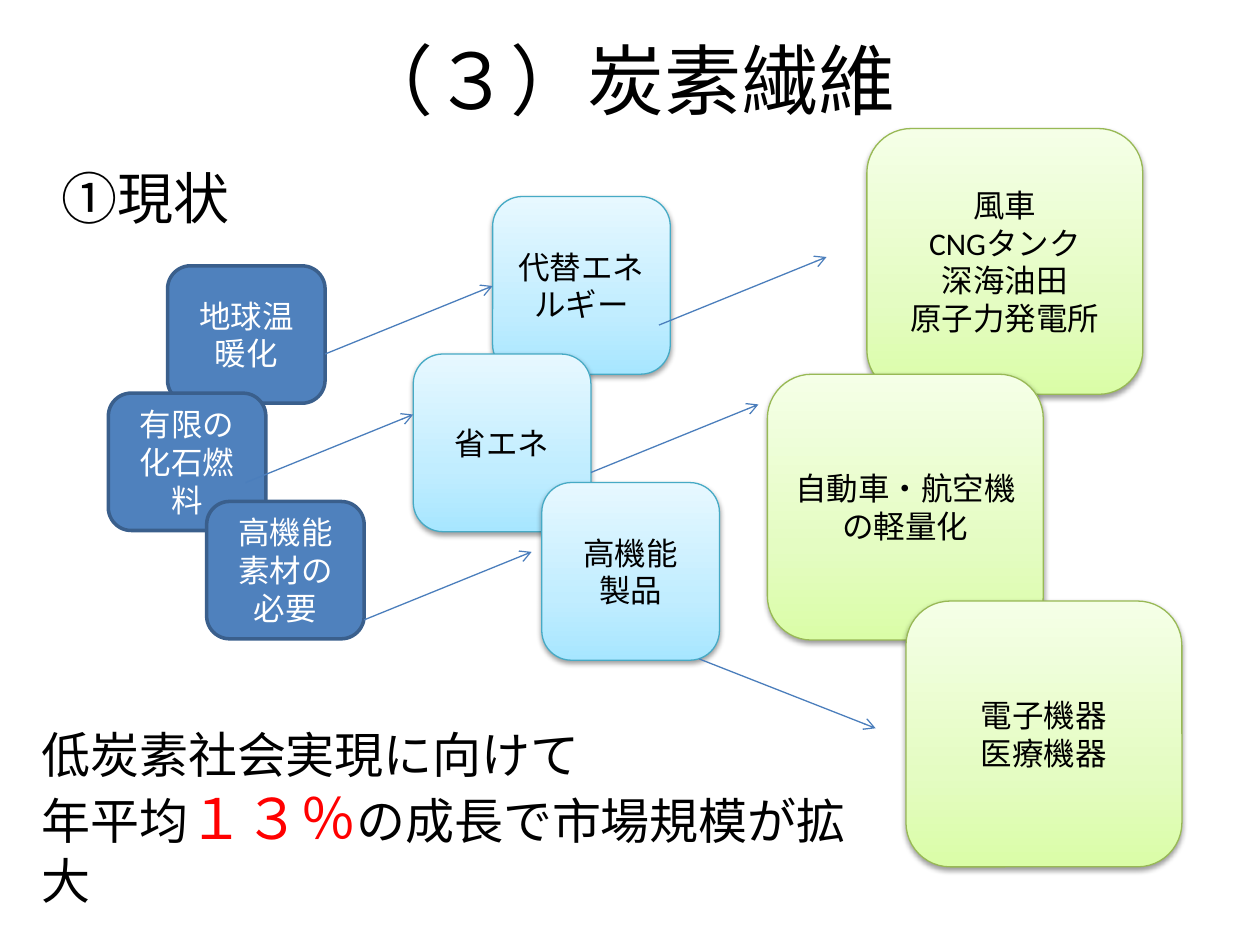
from lxml.etree import SubElement
from pptx import Presentation
from pptx.dml.color import RGBColor
from pptx.enum.shapes import MSO_CONNECTOR as Connector, MSO_SHAPE as Shape
from pptx.enum.text import MSO_ANCHOR as Anchor, PP_ALIGN as Align
from pptx.oxml.ns import qn
from pptx.util import Inches, Pt

FONT = "Calibri"
BLACK = RGBColor(0x00, 0x00, 0x00)
WHITE = RGBColor(0xFF, 0xFF, 0xFF)
RED = RGBColor(0xFF, 0x00, 0x00)
BLUE = RGBColor(0x4F, 0x81, 0xBD)
BLUE_EDGE = RGBColor(0x3A, 0x5F, 0x8C)
AQUA_EDGE = RGBColor(0x46, 0xAA, 0xC5)
GREEN_EDGE = RGBColor(0x98, 0xB9, 0x55)
ARROW = RGBColor(0x4B, 0x7E, 0xBC)
AQUA_STOPS = [(0, "A7E6FF"), (35, "C1EDFF"), (100, "E7F8FF")]
GREEN_STOPS = [(0, "DAFDA7"), (35, "E4FCC2"), (100, "F5FFE7")]

# Content: each group holds its look, its card size and (left, top, text)
TITLE = "（３）炭素繊維"
HEADING = "①現状"
GROUPS = [
    dict(size=(1.25, 1.09), fill=BLUE, edge=BLUE_EDGE, weight=2, ink=WHITE, cards=[
        (1.33, 2.11, "地球温暖化"),
        (0.86, 3.12, "有限の化石燃料"),
        (1.64, 3.98, "高機能素材の\n必要")]),
    dict(size=(1.41, 1.41), fill=AQUA_STOPS, edge=AQUA_EDGE, weight=0.75, ink=BLACK, cards=[
        (3.91, 1.56, "代替エネルギー"),
        (3.28, 2.81, "省エネ"),
        (4.30, 3.83, "高機能\n製品")]),
    dict(size=(2.19, 2.11), fill=GREEN_STOPS, edge=GREEN_EDGE, weight=0.75, ink=BLACK, cards=[
        (6.88, 1.02, "風車\nCNGタンク\n深海油田\n原子力発電所"),
        (6.09, 2.97, "自動車・航空機の軽量化"),
        (7.19, 4.77, "電子機器\n医療機器")]),
]
RISE = (1.33, -0.54)
ARROWS = [  # start, run and rise
    ((2.58, 2.81), RISE), ((1.95, 3.83), RISE), ((2.89, 4.92), RISE),
    ((5.23, 2.58), RISE), ((4.69, 3.75), RISE), ((5.55, 5.23), (1.40, 0.55)),
]
SUMMARY = [
    [("低炭素社会実現に向けて", 28, BLACK)],
    [("年平均", 28, BLACK), ("１３％", 32, RED), ("の成長で市場規模が拡大", 28, BLACK)],
]


def style(span, size, color):
    span.font.name = FONT
    span.font.size = Pt(size)
    span.font.color.rgb = color


def write(frame, text, size, color, align):
    frame.word_wrap = True
    frame.text = text
    for para in frame.paragraphs:
        para.alignment = align
        for span in para.runs:
            style(span, size, color)


def add_color(parent, value):
    return SubElement(parent, qn("a:srgbClr"), val=value)


def paint_gradient(box, stops):
    box.fill.gradient()
    box.fill.gradient_angle = 90
    stop_list = box._element.spPr.find(".//" + qn("a:gsLst"))
    for old in list(stop_list):
        stop_list.remove(old)
    for position, value in stops:
        add_color(SubElement(stop_list, qn("a:gs"), pos=str(position * 1000)), value)


def add_shadow(box):
    effects = box._element.spPr.find(qn("a:effectLst"))
    shadow = SubElement(effects, qn("a:outerShdw"), blurRad=str(Pt(3.1)), dist=str(Pt(1.6)),
                        dir=str(90 * 60000), rotWithShape="0")
    SubElement(add_color(shadow, "000000"), qn("a:alpha"), val="38000")


def add_card(page, group, left, top, text):
    box = page.shapes.add_shape(Shape.ROUNDED_RECTANGLE, Inches(left), Inches(top),
                                *map(Inches, group["size"]))
    box.shadow.inherit = False
    box.line.color.rgb = group["edge"]
    box.line.width = Pt(group["weight"])
    if isinstance(group["fill"], RGBColor):
        box.fill.solid()
        box.fill.fore_color.rgb = group["fill"]
    else:
        paint_gradient(box, group["fill"])
        add_shadow(box)
    box.text_frame.vertical_anchor = Anchor.MIDDLE
    write(box.text_frame, text, 18, group["ink"], Align.CENTER)


def add_arrow(page, start, step):
    (x, y), (run, rise) = start, step
    line = page.shapes.add_connector(Connector.STRAIGHT, Inches(x), Inches(y),
                                     Inches(x + run), Inches(y + rise))
    line.line.color.rgb = ARROW
    line.line.width = Pt(0.75)
    SubElement(line.line._get_or_add_ln(), qn("a:tailEnd"), type="arrow")
    SubElement(line._element.spPr, qn("a:effectLst"))


def add_text_box(page, left, top, width, height):
    box = page.shapes.add_textbox(Inches(left), Inches(top), Inches(width), Inches(height))
    box.text_frame.word_wrap = True
    return box.text_frame


def main():
    deck = Presentation()
    deck.slide_width, deck.slide_height = Inches(10), Inches(7.5)
    page = deck.slides.add_slide(deck.slide_layouts[5])

    # Title and heading
    title = page.shapes.title
    title.left, title.top, title.width, title.height = map(Inches, (0.47, 0, 9, 1.25))
    title.text_frame.vertical_anchor = Anchor.MIDDLE
    write(title.text_frame, TITLE, 44, BLACK, Align.CENTER)
    write(add_text_box(page, 0.39, 1.25, 9, 6.02), HEADING, 32, BLACK, Align.LEFT)

    # Cards, then the arrows over them
    for group in GROUPS:
        for card in group["cards"]:
            add_card(page, group, *card)
    for start, step in ARROWS:
        add_arrow(page, start, step)

    # Summary
    frame = add_text_box(page, 0.23, 5.7, 6.95, 1.11)
    for index, parts in enumerate(SUMMARY):
        para = frame.add_paragraph() if index else frame.paragraphs[0]
        for text, size, color in parts:
            span = para.add_run()
            span.text = text
            style(span, size, color)

    deck.save("out.pptx")


if __name__ == "__main__":
    main()
